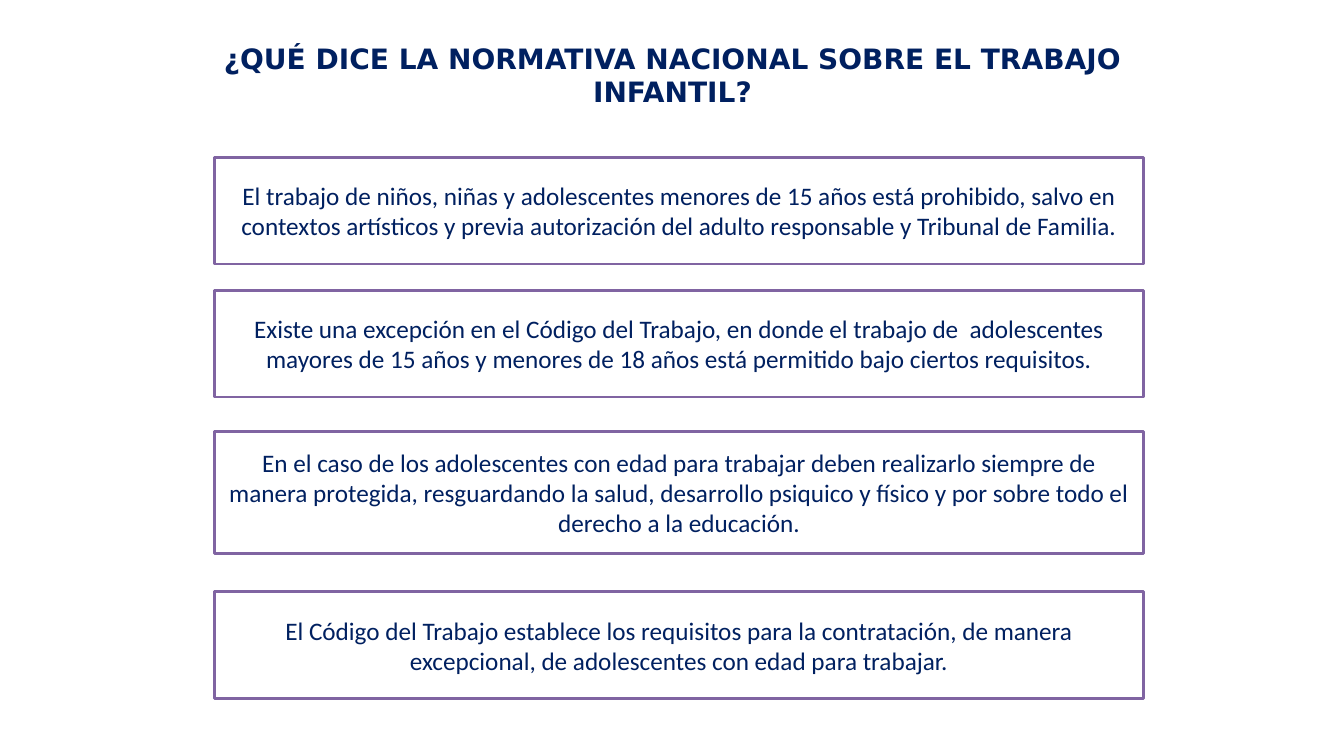
from pptx import Presentation
from pptx.dml.color import RGBColor
from pptx.enum.shapes import MSO_SHAPE
from pptx.enum.text import MSO_ANCHOR, PP_ALIGN
from pptx.util import Inches, Pt

COLORS = {"navy": "002060", "purple": "8064A2", "white": "FFFFFF"}

TITLE = "¿QUÉ DICE LA NORMATIVA NACIONAL SOBRE EL TRABAJO INFANTIL?"

RULES = [
    (1.56, 1.06, "El trabajo de niños, niñas y adolescentes menores de 15 años está prohibido, "
                 "salvo en contextos artísticos y previa autorización del adulto responsable "
                 "y Tribunal de Familia."),
    (2.88, 1.06, "Existe una excepción en el Código del Trabajo, en donde el trabajo de  adolescentes "
                 "mayores de 15 años y menores de 18 años está permitido bajo ciertos requisitos."),
    (4.28, 1.21, "En el caso de los adolescentes con edad para trabajar deben realizarlo siempre "
                 "de manera protegida, resguardando la salud, desarrollo psiquico y físico "
                 "y por sobre todo el derecho a la educación."),
    (5.87, 1.06, "El Código del Trabajo establece los requisitos para la contratación, "
                 "de manera excepcional, de adolescentes con edad para trabajar."),
]


def color(name):
    return RGBColor.from_string(COLORS[name])


def write_text(box, text, font_name, size, bold=False):
    frame = box.text_frame
    frame.word_wrap = True
    paragraph = frame.paragraphs[0]
    paragraph.text = text
    paragraph.alignment = PP_ALIGN.CENTER
    paragraph.font.name = font_name
    paragraph.font.size = Pt(size)
    paragraph.font.bold = bold
    paragraph.font.color.rgb = color("navy")


def add_title(page):
    box = page.shapes.add_textbox(Inches(1.67), Inches(0.36), Inches(10), Inches(0.77))
    write_text(box, TITLE, "DejaVu Sans", 20, bold=True)


def add_rule_box(page, top, height, text):
    box = page.shapes.add_shape(
        MSO_SHAPE.RECTANGLE, Inches(2.13), Inches(top), Inches(9.21), Inches(height))
    box.shadow.inherit = False
    box.fill.solid()
    box.fill.fore_color.rgb = color("white")
    box.line.color.rgb = color("purple")
    box.line.width = Pt(2)
    box.text_frame.vertical_anchor = MSO_ANCHOR.MIDDLE
    write_text(box, text, "Calibri", 18)


def main():
    deck = Presentation()
    deck.slide_width = Inches(13.33)
    deck.slide_height = Inches(7.5)
    page = deck.slides.add_slide(deck.slide_layouts[6])
    for top, height, text in RULES:
        add_rule_box(page, top, height, text)
    add_title(page)
    deck.save("out.pptx")


if __name__ == "__main__":
    main()
